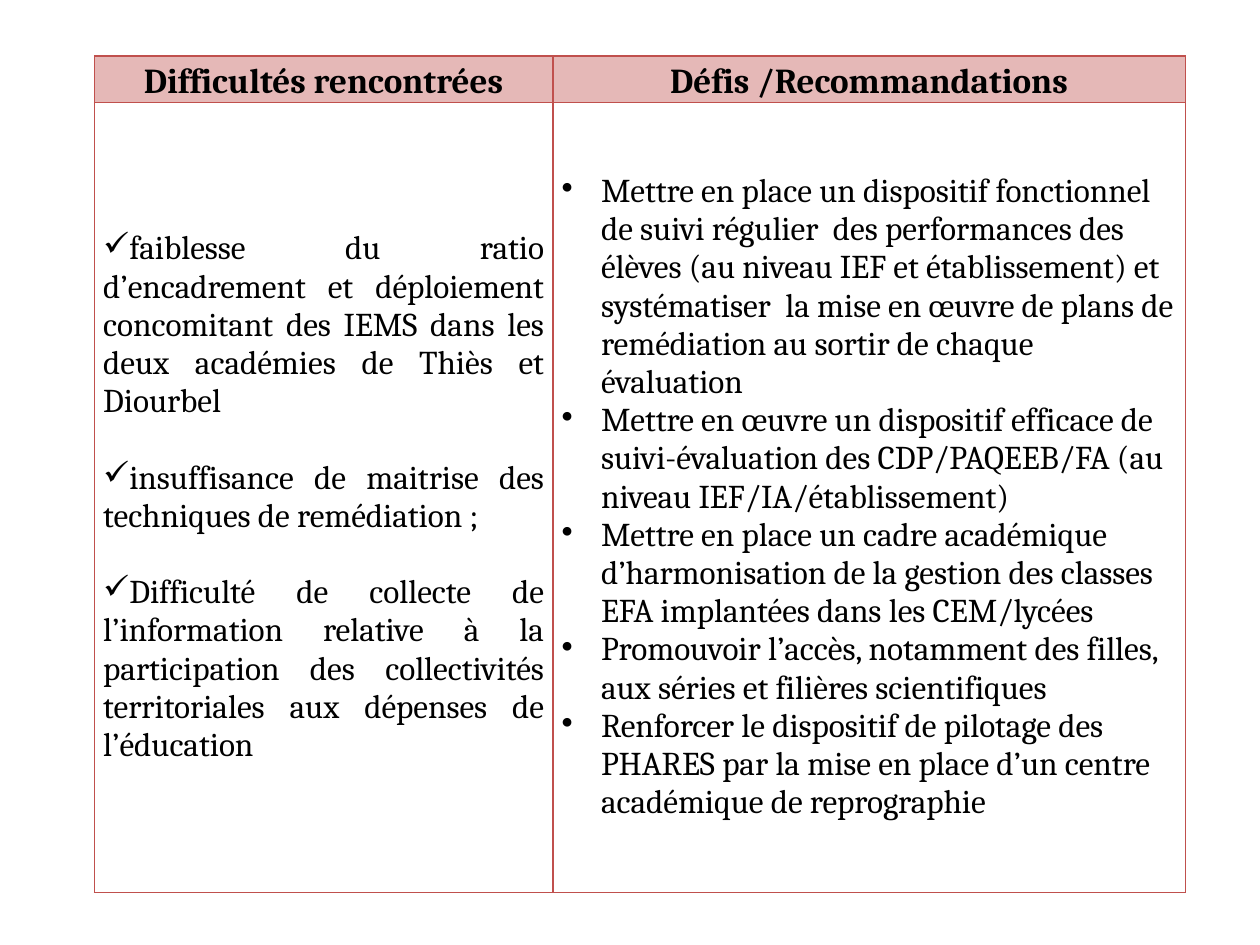
from lxml import etree
from pptx import Presentation
from pptx.dml.color import RGBColor
from pptx.enum import text
from pptx.oxml import ns
from pptx.util import Pt

BLACK = RGBColor(0x00, 0x00, 0x00)
PINK = RGBColor(0xE5, 0xB8, 0xB7)
RED = RGBColor(0xC0, 0x50, 0x4D)

DIFFICULTIES = [
    "faiblesse du ratio d’encadrement et déploiement concomitant des IEMS dans les deux académies de Thiès et Diourbel",
    "insuffisance de maitrise des techniques de remédiation ;",
    "Difficulté de collecte de l’information relative à la participation des collectivités territoriales aux dépenses de l’éducation",
]
RECOMMENDATIONS = [
    "Mettre en place un dispositif fonctionnel de suivi régulier  des performances des élèves (au niveau IEF et établissement) et systématiser  la mise en œuvre de plans de remédiation au sortir de chaque évaluation",
    "Mettre en œuvre un dispositif efficace de suivi-évaluation des CDP/PAQEEB/FA (au niveau IEF/IA/établissement)",
    "Mettre en place un cadre académique d’harmonisation de la gestion des classes EFA implantées dans les CEM/lycées",
    "Promouvoir l’accès, notamment des filles, aux séries et filières scientifiques",
    "Renforcer le dispositif de pilotage des PHARES par la mise en place d’un centre académique de reprographie",
]
COLUMNS = [
    dict(title="Difficultés rencontrées", items=DIFFICULTIES, width=262,
         bullet="✓", indent=0, gap=21.8, align=text.PP_ALIGN.JUSTIFY),
    dict(title="Défis /Recommandations", items=RECOMMENDATIONS, width=361.5,
         bullet="•", indent=22.5, gap=0, align=text.PP_ALIGN.LEFT),
]
ROW_HEIGHTS = [24.5, 451.5]
LEFT, TOP = 54, 32


def add_bullet(paragraph, char, indent):
    props = paragraph._p.get_or_add_pPr()
    props.set("marL", str(Pt(indent)))
    props.set("indent", str(-Pt(indent)))
    etree.SubElement(props, ns.qn("a:buChar"), char=char)


def style_cell(cell):
    cell.margin_left = cell.margin_right = Pt(5)
    cell.margin_top = cell.margin_bottom = 0
    cell.vertical_anchor = text.MSO_ANCHOR.MIDDLE
    props = cell._tc.get_or_add_tcPr()
    for side in ("a:lnL", "a:lnR", "a:lnT", "a:lnB"):
        border = etree.SubElement(props, ns.qn(side), w=str(Pt(1)))
        fill = etree.SubElement(border, ns.qn("a:solidFill"))
        etree.SubElement(fill, ns.qn("a:srgbClr"), val=str(RED))


def set_font(paragraph, size, bold):
    font = paragraph.font
    font.name = "Cambria"
    font.size = Pt(size)
    font.bold = bold
    font.color.rgb = BLACK


def fill_header(cell, title):
    style_cell(cell)
    cell.fill.solid()
    cell.fill.fore_color.rgb = PINK
    paragraph = cell.text_frame.paragraphs[0]
    paragraph.text = title
    paragraph.alignment = text.PP_ALIGN.CENTER
    paragraph.line_spacing = 1.15
    set_font(paragraph, 20, True)


def fill_body(cell, column):
    style_cell(cell)
    cell.fill.background()
    frame = cell.text_frame
    for i, item in enumerate(column["items"]):
        paragraph = frame.add_paragraph() if i else frame.paragraphs[0]
        paragraph.text = item
        paragraph.alignment = column["align"]
        add_bullet(paragraph, column["bullet"], column["indent"])
        if i and column["gap"]:
            paragraph.space_before = Pt(column["gap"])
        set_font(paragraph, 19, False)


def main():
    deck = Presentation()
    deck.slide_width, deck.slide_height = Pt(720), Pt(540)
    slide = deck.slides.add_slide(deck.slide_layouts[6])
    width = sum(column["width"] for column in COLUMNS)
    table = slide.shapes.add_table(
        len(ROW_HEIGHTS), len(COLUMNS), Pt(LEFT), Pt(TOP), Pt(width), Pt(sum(ROW_HEIGHTS))
    ).table
    table.first_row = table.horz_banding = False
    for row, height in zip(table.rows, ROW_HEIGHTS):
        row.height = Pt(height)
    for i, column in enumerate(COLUMNS):
        table.columns[i].width = Pt(column["width"])
        fill_header(table.cell(0, i), column["title"])
        fill_body(table.cell(1, i), column)
    deck.save("out.pptx")


if __name__ == "__main__":
    main()
